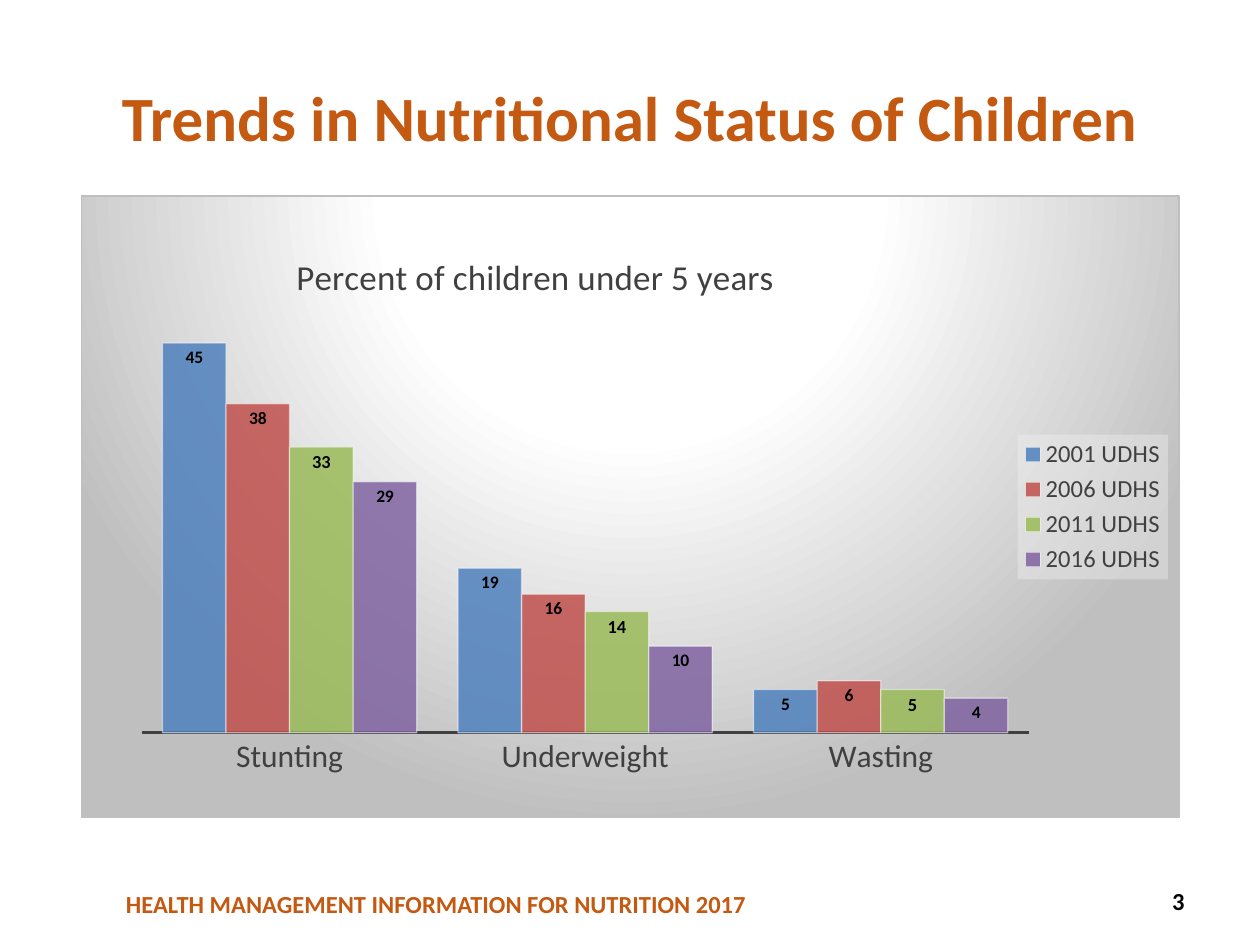
from lxml.etree import SubElement
from pptx import Presentation
from pptx.chart.data import CategoryChartData
from pptx.dml.color import RGBColor
from pptx.enum.chart import XL_CHART_TYPE as ChartType
from pptx.enum.chart import XL_LABEL_POSITION as LabelPos
from pptx.enum.chart import XL_LEGEND_POSITION as LegendPos
from pptx.enum.chart import XL_TICK_MARK as Tick
from pptx.enum.shapes import MSO_SHAPE as Shape
from pptx.enum.text import MSO_ANCHOR as Anchor
from pptx.enum.text import PP_ALIGN as Align
from pptx.oxml import parse_xml
from pptx.oxml.ns import nsdecls, qn
from pptx.util import Cm, Pt

FONT = "Calibri"
ORANGE = RGBColor(0xC4, 0x59, 0x11)
BLACK = RGBColor(0, 0, 0)
WHITE = RGBColor(0xFF, 0xFF, 0xFF)
DARK = RGBColor(0x40, 0x40, 0x40)
SILVER = RGBColor(0xBF, 0xBF, 0xBF)
PALE = RGBColor(0xF2, 0xF2, 0xF2)
BLUE = RGBColor(0x4F, 0x81, 0xBD)
RED = RGBColor(0xC0, 0x50, 0x4D)
GREEN = RGBColor(0x9B, 0xBB, 0x59)
PURPLE = RGBColor(0x80, 0x64, 0xA2)

CATEGORIES = ("Stunting", "Underweight", "Wasting")
SURVEYS = (
    ("2001 UDHS", (45, 19, 5), BLUE, 10),
    ("2006 UDHS", (38, 16, 6), RED, 10),
    ("2011 UDHS", (33, 14, 5), GREEN, 10.5),
    ("2016 UDHS", (29, 10, 4), PURPLE, 10),
)


def set_font(font, size, color, bold=False):
    font.name = FONT
    font.size = Pt(size)
    font.bold = bold
    font.color.rgb = color


def write_text(sp, text, size, color, align):
    tf = sp.text_frame
    tf.word_wrap = True
    tf.vertical_anchor = Anchor.MIDDLE
    p = tf.paragraphs[0]
    p.text = text
    p.alignment = align
    set_font(p.font, size, color, True)


def add_text(slide, box, text, size, color, align):
    sp = slide.shapes.add_textbox(*map(Cm, box))
    write_text(sp, text, size, color, align)


def add_footer(slide, box, text):
    sp = slide.shapes.add_shape(Shape.RECTANGLE, *map(Cm, box))
    sp.shadow.inherit = False
    sp.fill.solid()
    sp.fill.fore_color.rgb = WHITE
    sp.line.fill.background()
    write_text(sp, text, 14, ORANGE, Align.LEFT)
    tf = sp.text_frame
    tf.margin_left, tf.margin_top = Cm(2.54), Cm(1.42)


def place(element, index, **position):
    for old in element.findall(qn("c:layout")):
        element.remove(old)
    layout = parse_xml(f"<c:layout {nsdecls('c')}><c:manualLayout/></c:layout>")
    manual = layout[0]
    if element.tag == qn("c:plotArea"):
        SubElement(manual, qn("c:layoutTarget")).set("val", "inner")
    for axis in "xy":
        SubElement(manual, qn(f"c:{axis}Mode")).set("val", "edge")
    for key, value in position.items():
        SubElement(manual, qn(f"c:{key}")).set("val", str(value))
    element.insert(index, layout)


def style_chart_area(chart):
    chart.element.find(qn("c:chart")).addnext(parse_xml(f"""
        <c:spPr {nsdecls('c', 'a')}>
          <a:gradFill>
            <a:gsLst>
              <a:gs pos="0"><a:srgbClr val="{WHITE}"/></a:gs>
              <a:gs pos="39000"><a:srgbClr val="{WHITE}"/></a:gs>
              <a:gs pos="100000"><a:srgbClr val="{SILVER}"/></a:gs>
            </a:gsLst>
            <a:path path="circle">
              <a:fillToRect l="50000" t="-80000" r="50000" b="180000"/>
            </a:path>
          </a:gradFill>
          <a:ln w="9525"><a:solidFill><a:srgbClr val="{SILVER}"/></a:solidFill></a:ln>
        </c:spPr>"""))


def style_series(series, color, label_size):
    fmt = series.format
    fmt.fill.solid()
    fmt.fill.fore_color.rgb = color
    fmt.line.color.rgb = WHITE
    fmt.line.width = Pt(0.75)
    colors = list(series._element.iter(qn("a:srgbClr")))
    for node, percent in zip(colors, (85, 50)):
        SubElement(node, qn("a:alpha")).set("val", str(percent * 1000))
    labels = series.data_labels
    labels.show_value = True
    labels.position = LabelPos.INSIDE_END
    set_font(labels.font, label_size, BLACK, True)


def style_axes(chart):
    axis = chart.category_axis
    axis.major_tick_mark = axis.minor_tick_mark = Tick.NONE
    axis.format.line.color.rgb = DARK
    axis.format.line.width = Pt(1.5)
    set_font(axis.tick_labels.font, 18, DARK)
    values = chart.value_axis
    values.minimum_scale, values.maximum_scale = 0, 50
    values.has_major_gridlines = False
    values.visible = False


def style_title(chart, text):
    chart.has_title = True
    title = chart.chart_title
    p = title.text_frame.paragraphs[0]
    p.text = text
    set_font(p.font, 20, DARK)
    place(title._element, 1, x=0.19, y=0.08)


def style_legend(chart):
    chart.has_legend = True
    legend = chart.legend
    legend.position = LegendPos.RIGHT
    legend.include_in_layout = False
    set_font(legend.font, 14, DARK)
    place(legend._element, 1, x=0.853, y=0.384, w=0.137, h=0.233)
    legend._element.find(qn("c:txPr")).addprevious(parse_xml(
        f'<c:spPr {nsdecls("c", "a")}><a:solidFill><a:srgbClr val="{PALE}">'
        '<a:alpha val="39000"/></a:srgbClr></a:solidFill></c:spPr>'))


def add_trend_chart(slide, box):
    data = CategoryChartData()
    data.categories = CATEGORIES
    for name, values, _, _ in SURVEYS:
        data.add_series(name, values)
    chart = slide.shapes.add_chart(
        ChartType.COLUMN_CLUSTERED, *map(Cm, box), data).chart
    set_font(chart.font, 10, BLACK)
    style_chart_area(chart)
    style_title(chart, "Percent of children under 5 years")
    style_axes(chart)
    style_legend(chart)
    plot = chart.plots[0]
    plot.gap_width, plot.overlap = 65, 0
    plot.vary_by_categories = False
    for series, (_, _, color, label_size) in zip(plot.series, SURVEYS):
        style_series(series, color, label_size)
    plot_area = chart.element.find(".//" + qn("c:plotArea"))
    place(plot_area, 0, x=0.055, y=0.167, w=0.808, h=0.697)


def main():
    prs = Presentation()
    prs.slide_width, prs.slide_height = Cm(25.4), Cm(19.05)
    slide = prs.slides.add_slide(prs.slide_layouts[6])
    add_footer(slide, (0, 16.08, 25.4, 2.97),
               "HEALTH MANAGEMENT INFORMATION FOR NUTRITION 2017")
    add_text(slide, (1.27, 0.76, 22.86, 3.18),
             "Trends in Nutritional Status of Children", 36, ORANGE, Align.CENTER)
    add_text(slide, (18.2, 17.65, 5.93, 1.02), "3", 14, BLACK, Align.RIGHT)
    add_trend_chart(slide, (1.63, 3.94, 22.15, 12.55))
    prs.save("out.pptx")


if __name__ == "__main__":
    main()
